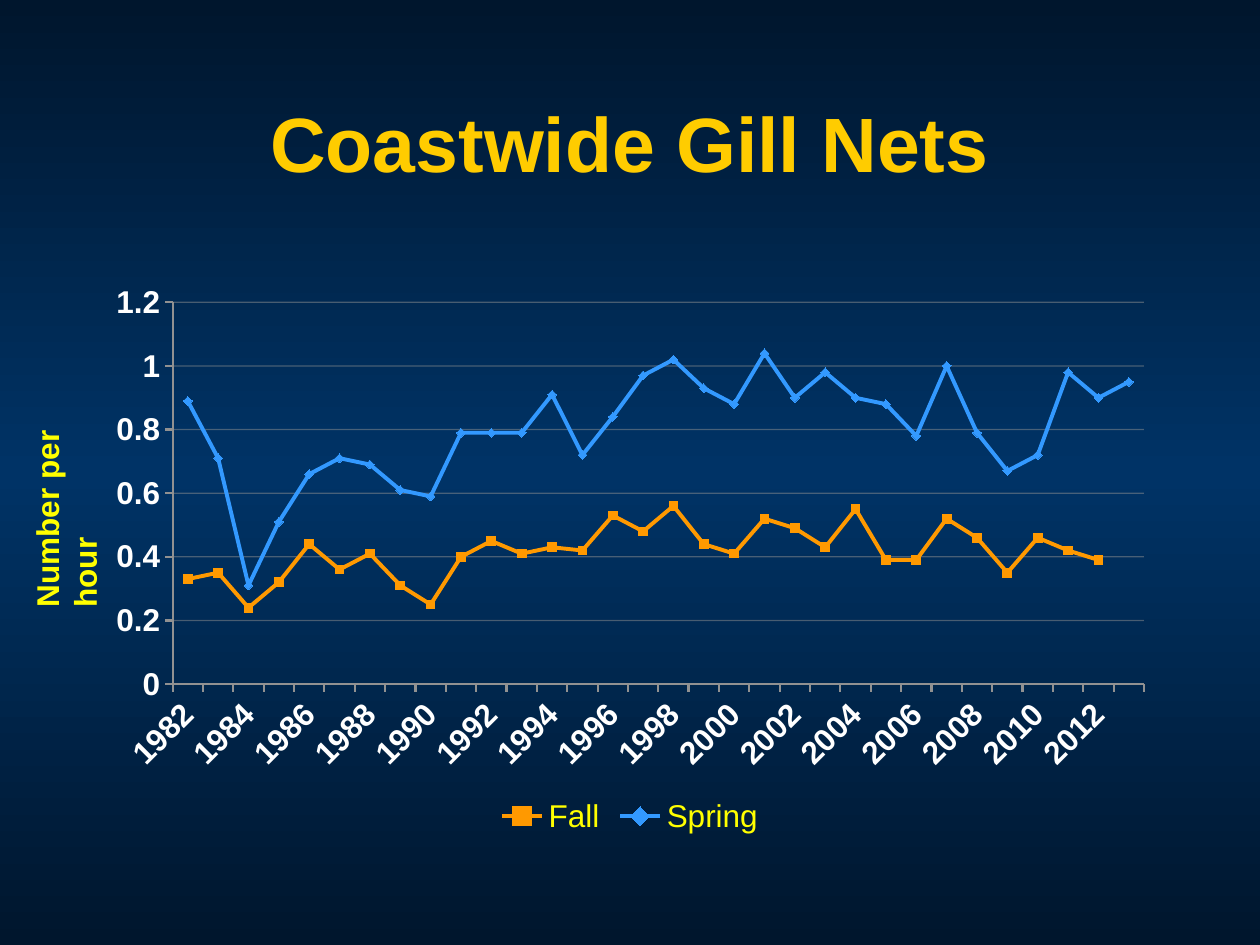
from copy import deepcopy
from dataclasses import dataclass

from lxml.etree import SubElement as Sub
from pptx import Presentation
from pptx.chart.data import CategoryChartData
from pptx.dml.color import RGBColor as RGB
from pptx.enum.chart import XL_CHART_TYPE as Chart, XL_LEGEND_POSITION as Legend
from pptx.enum.chart import XL_MARKER_STYLE as Marker, XL_TICK_MARK as Tick
from pptx.enum.text import MSO_ANCHOR as Anchor, PP_ALIGN as Align
from pptx.oxml.ns import qn
from pptx.util import Inches, Pt


@dataclass(frozen=True)
class Theme:
    font: str = "Arial"
    edge: str = "00162D"
    middle: str = "003366"
    gold: str = "FFCC00"
    yellow: str = "FFFF00"
    white: str = "FFFFFF"
    gray: str = "919191"
    fall: str = "FF9900"
    spring: str = "3399FF"
    title_size: int = 44
    body_size: int = 18


THEME = Theme()
YEARS = [float(year) for year in range(1982, 2014)]
CATCHES = {
    "Fall": (THEME.fall, Marker.SQUARE, [
        0.33, 0.35, 0.24, 0.32, 0.44, 0.36, 0.41, 0.31, 0.25, 0.4, 0.45,
        0.41, 0.43, 0.42, 0.53, 0.48, 0.56, 0.44, 0.41, 0.52, 0.49, 0.43,
        0.55, 0.39, 0.39, 0.52, 0.46, 0.35, 0.46, 0.42, 0.39, None]),
    "Spring": (THEME.spring, Marker.DIAMOND, [
        0.89, 0.71, 0.31, 0.51, 0.66, 0.71, 0.69, 0.61, 0.59, 0.79, 0.79,
        0.79, 0.91, 0.72, 0.84, 0.97, 1.02, 0.93, 0.88, 1.04, 0.9, 0.98,
        0.9, 0.88, 0.78, 1, 0.79, 0.67, 0.72, 0.98, 0.9, 0.95]),
}
CHART_PLACE = (0.75, 2.17, 8.5, 4.5)
PLOT_PLACE = (1.37, 2.4, 7.71, 3.03)


def assign(target, values):
    for name, value in values.items():
        setattr(target, name, value)


class SlideBuilder:
    def __init__(self, slide, theme):
        self.slide, self.theme = slide, theme

    def font(self, font, color, size=None, bold=False):
        assign(font, {"name": self.theme.font, "bold": bold,
                      "size": Pt(size or self.theme.body_size)})
        font.color.rgb = RGB.from_string(color)

    def line(self, line, color, width):
        line.color.rgb = RGB.from_string(color)
        line.width = Pt(width)

    def background(self, colors):
        fill = self.slide.background.fill
        fill.gradient()
        fill.gradient_angle = 90
        stops = self.slide.element.find(".//" + qn("a:gsLst"))
        stops.insert(1, deepcopy(stops[0]))
        for index, (stop, color) in enumerate(zip(fill.gradient_stops, colors)):
            stop.color.rgb = RGB.from_string(color)
            stop.position = index / (len(colors) - 1)

    def text(self, words, place, color, size=None, align=Align.LEFT,
             anchor=Anchor.TOP, vert="horz"):
        frame = self.slide.shapes.add_textbox(*map(Inches, place)).text_frame
        assign(frame, {"word_wrap": True, "vertical_anchor": anchor})
        frame._txBody.bodyPr.set("vert", vert)
        paragraph = frame.paragraphs[0]
        paragraph.alignment = align
        run = paragraph.add_run()
        run.text = words
        self.font(run.font, color, size, bold=True)

    def axis(self, axis, values):
        assign(axis, {"major_tick_mark": Tick.OUTSIDE,
                      "minor_tick_mark": Tick.NONE, **values})
        assign(axis.tick_labels, {"number_format": "General",
                                  "number_format_is_linked": False})
        self.font(axis.tick_labels.font, self.theme.white, bold=True)
        self.line(axis.format.line, self.theme.gray, 1.25)

    def plot_layout(self, chart, place, plot_place):
        left, top, width, height = place
        plot_left, plot_top, plot_width, plot_height = plot_place
        settings = {"layoutTarget": "inner", "xMode": "edge", "yMode": "edge",
                    "x": (plot_left - left) / width, "y": (plot_top - top) / height,
                    "w": plot_width / width, "h": plot_height / height}
        plot_area = chart._chartSpace.chart.plotArea
        layout = plot_area.find(qn("c:layout"))
        if layout is None:
            layout = Sub(plot_area, qn("c:layout"))
            plot_area.insert(0, layout)
        manual = Sub(layout, qn("c:manualLayout"))
        for name, value in settings.items():
            Sub(manual, qn("c:" + name)).set("val", str(value))

    def line_chart(self, place, plot_place, years, catches):
        data = CategoryChartData()
        data.categories = years
        for name, (_, _, values) in catches.items():
            data.add_series(name, values)
        chart = self.slide.shapes.add_chart(
            Chart.LINE_MARKERS, *map(Inches, place), data).chart
        assign(chart, {"has_title": False, "has_legend": True})
        self.font(chart.font, self.theme.yellow)
        assign(chart.legend, {"position": Legend.BOTTOM, "include_in_layout": False})
        self.font(chart.legend.font, self.theme.yellow)
        self.plot_layout(chart, place, plot_place)

        self.axis(chart.category_axis, {"has_major_gridlines": False})
        years_axis = chart.category_axis._element
        years_axis.find(".//" + qn("a:bodyPr")).set("rot", "-2700000")
        skip = Sub(years_axis, qn("c:tickLblSkip"))
        skip.set("val", "2")
        years_axis.find(qn("c:noMultiLvlLbl")).addprevious(skip)

        self.axis(chart.value_axis, {"minimum_scale": 0, "maximum_scale": 1.2,
                                     "major_unit": 0.2, "has_major_gridlines": True})
        self.line(chart.value_axis.major_gridlines.format.line, self.theme.gray, 0.75)
        grid = chart.value_axis._element.find(qn("c:majorGridlines"))
        Sub(grid.find(".//" + qn("a:srgbClr")), qn("a:alpha")).set("val", "50000")

        plot = chart.plots[0]
        plot.vary_by_categories = False
        for series, (color, marker, _) in zip(plot.series, catches.values()):
            series.smooth = False
            self.line(series.format.line, color, 2.25)
            assign(series.marker, {"style": marker, "size": 5})
            series.marker.format.fill.solid()
            series.marker.format.fill.fore_color.rgb = RGB.from_string(color)
            self.line(series.marker.format.line, color, 0.75)


def main():
    deck = Presentation()
    assign(deck, {"slide_width": Inches(10), "slide_height": Inches(7.5)})
    builder = SlideBuilder(deck.slides.add_slide(deck.slide_layouts[6]), THEME)
    builder.background([THEME.edge, THEME.middle, THEME.edge])
    builder.text("Coastwide Gill Nets", (0, 0.5, 10, 1.25), THEME.gold,
                 THEME.title_size, Align.CENTER, Anchor.MIDDLE)
    builder.line_chart(CHART_PLACE, PLOT_PLACE, YEARS, CATCHES)
    builder.text("Number per hour", (0.17, 2.75, 0.5, 2.17), THEME.yellow,
                 vert="vert270")
    deck.save("out.pptx")


if __name__ == "__main__":
    main()
